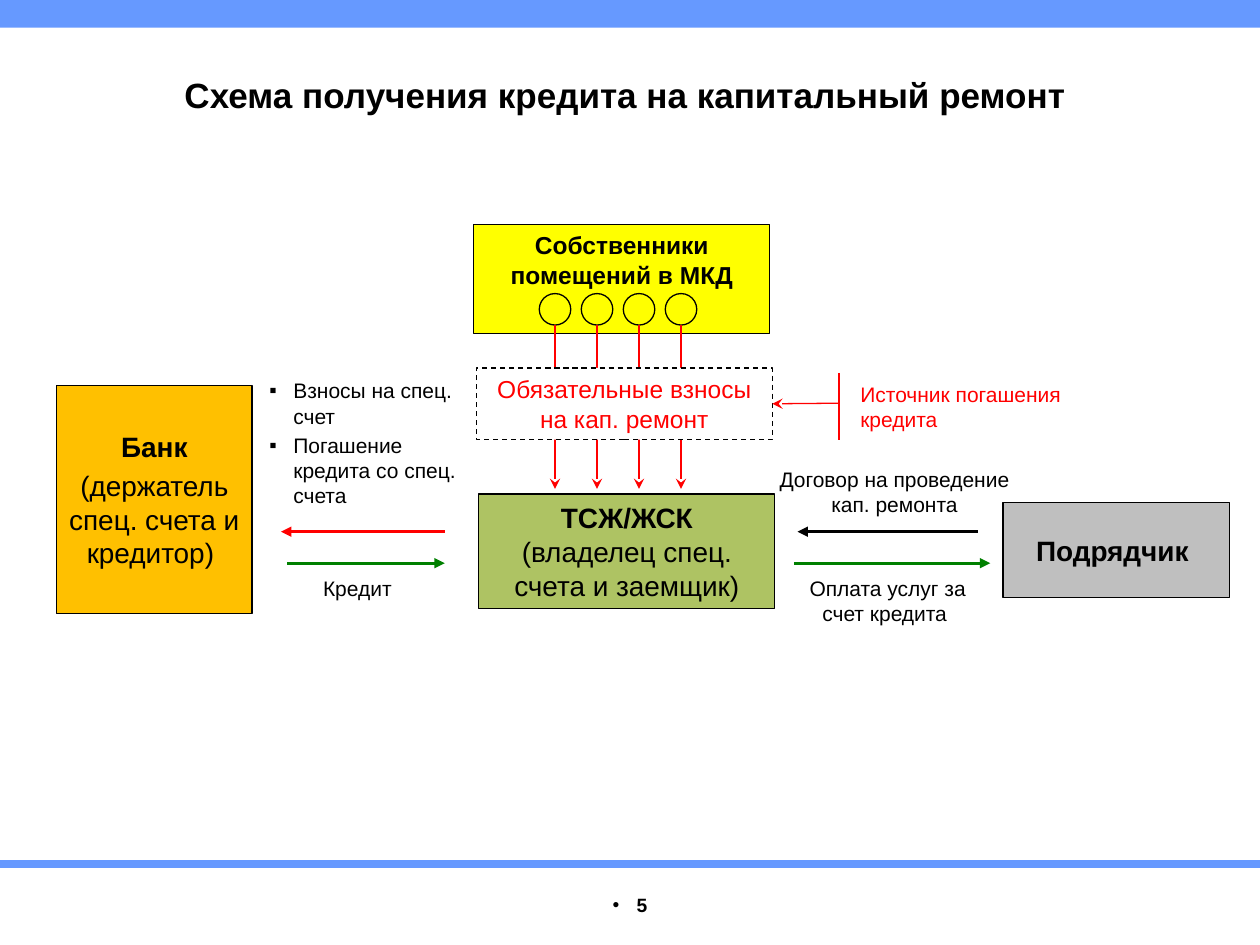
from pptx import Presentation
from pptx.util import Inches, Pt
from pptx.dml.color import RGBColor
from pptx.enum.dml import MSO_LINE as Dash
from pptx.enum.shapes import MSO_SHAPE as Shape, MSO_CONNECTOR as Link
from pptx.enum.text import PP_ALIGN as Align, MSO_ANCHOR as Anchor
from pptx.oxml.ns import qn
from lxml import etree

BLACK, RED, GREEN, BLUE = "000000", "FF0000", "008000", "6699FF"


def color(code):
    return RGBColor.from_string(code)


def write(shape, paras, size=12, tint=BLACK, bold=False, align=Align.CENTER,
          anchor=Anchor.TOP, bullet=None, hang=0.19):
    """Each paragraph is a string or a list of (text, bold) runs."""
    frame = shape.text_frame
    frame.word_wrap = True
    frame.vertical_anchor = anchor
    frame.margin_left = frame.margin_right = Inches(0.1)
    frame.margin_top = frame.margin_bottom = Inches(0.05)
    for i, para in enumerate(paras):
        p = frame.add_paragraph() if i else frame.paragraphs[0]
        p.alignment = align
        p.space_before = Pt(0.2 * size if i else 0)
        if bullet:
            props = p._p.get_or_add_pPr()
            props.set("marL", str(Inches(hang)))
            props.set("indent", str(-Inches(hang)))
            etree.SubElement(props, qn("a:buFont"), typeface="Arial")
            etree.SubElement(props, qn("a:buChar"), char=bullet)
        for text, heavy in [(para, bold)] if isinstance(para, str) else para:
            run = p.add_run()
            run.text = text
            font = run.font
            font.name, font.size, font.bold = "Arial", Pt(size), heavy
            font.color.rgb = color(tint)


def label(slide, box, paras, **form):
    shape = slide.shapes.add_textbox(*map(Inches, box))
    write(shape, paras, **form)


def block(slide, box, fill=None, line=BLACK, kind=Shape.RECTANGLE):
    shape = slide.shapes.add_shape(kind, *map(Inches, box))
    shape.shadow.inherit = False
    if fill:
        shape.fill.solid()
        shape.fill.fore_color.rgb = color(fill)
    else:
        shape.fill.background()
    if line:
        shape.line.color.rgb = color(line)
        shape.line.width = Pt(0.75)
    else:
        shape.line.fill.background()
    return shape


def link(slide, start, end, tint, width=1.75, head="triangle"):
    line = slide.shapes.add_connector(Link.STRAIGHT, *map(Inches, start + end))
    line.line.color.rgb = color(tint)
    line.line.width = Pt(width)
    if head:
        etree.SubElement(line.line._get_or_add_ln(), qn("a:tailEnd"), type=head)
    etree.SubElement(line._element.spPr, qn("a:effectLst"))
    return line


def draw_frame(slide):
    # Bands, title and page number
    block(slide, (0, 0, 10, 0.22), BLUE, None)
    link(slide, (0, 6.86), (10, 6.86), BLUE, 4.5, None)
    label(slide, (3.97, 7.04, 2.06, 0.31), ["5"], size=11, bold=True, bullet="•")
    title = slide.shapes.title
    title.left, title.top, title.width, title.height = map(
        Inches, (0.67, 0.53, 8.66, 0.44))
    write(title, ["Схема получения кредита на капитальный ремонт "],
          size=20, bold=True, anchor=Anchor.MIDDLE)


def draw_bank(slide, x, y):
    bank = block(slide, (x, y, 1.55, 1.81), "FFC000")
    write(bank, [[("Банк", True)], "(держатель спец. счета и кредитор) "],
          size=16, anchor=Anchor.MIDDLE)
    # Exchange between the bank and the association
    label(slide, (x + 1.59, y - 0.11, 1.76, 1.15),
          ["Взносы на спец. счет", "Погашение кредита со спец. счета"],
          align=Align.LEFT, bullet="▪")
    link(slide, (x + 3.08, y + 1.16), (x + 1.78, y + 1.16), RED)
    link(slide, (x + 1.83, y + 1.41), (x + 3.08, y + 1.41), GREEN)
    label(slide, (x + 1.91, y + 1.46, 1, 0.34), ["Кредит "])


def draw_owners(slide, x, y):
    owners = block(slide, (x, y, 2.35, 0.87), "FFFF00")
    write(owners, ["Собственники помещений в МКД"], size=14, bold=True)
    # Each owner pays into the account
    size, step, top = 0.25, 1 / 3, y + 0.55
    for i in range(4):
        left = x + 0.52 + i * step
        block(slide, (left, top, size, size), kind=Shape.OVAL)
        mid = left + size / 2
        link(slide, (mid, top + size), (mid, y + 2.1), RED, 0.75, "stealth")
    # Fees, over the payment lines
    fees = block(slide, (x + 0.02, y + 1.14, 2.35, 0.57), "FFFFFF")
    fees.line.dash_style = Dash.DASH
    write(fees, ["Обязательные взносы на кап. ремонт"], size=14, tint=RED,
          anchor=Anchor.MIDDLE)
    return fees


def draw_source(slide, x, y, fees):
    mid = y + 0.24
    arrow = link(slide, (x, mid), (x - 0.51, mid), RED, 0.75, "stealth")
    arrow.end_connect(fees, 3)
    link(slide, (x, y), (x, y + 0.53), RED, 0.75, None)
    label(slide, (x + 0.07, y + 0.02, 1.86, 0.5), ["Источник погашения кредита"],
          tint=RED, align=Align.LEFT)


def draw_union(slide, x, y):
    union = block(slide, (x, y, 2.35, 0.91), "AEC363")
    write(union, [[("ТСЖ/ЖСК ", True), ("(владелец спец. счета и заемщик)", False)]],
          size=16, anchor=Anchor.MIDDLE)


def draw_builder(slide, x, y):
    builder = block(slide, (x, y, 1.8, 0.75), "BFBFBF")
    write(builder, ["Подрядчик "], size=16, bold=True, anchor=Anchor.MIDDLE)
    # Exchange between the association and the builder
    label(slide, (x - 1.95, y - 0.34, 2.18, 0.5),
          ["Договор на проведение кап. ремонта"])
    link(slide, (x - 0.2, y + 0.23), (x - 1.63, y + 0.23), BLACK)
    link(slide, (x - 1.66, y + 0.48), (x - 0.1, y + 0.48), GREEN)
    label(slide, (x - 1.66, y + 0.53, 1.49, 0.5), ["Оплата услуг за счет кредита "])


def main():
    deck = Presentation()
    deck.slide_width, deck.slide_height = Inches(10), Inches(7.5)
    slide = deck.slides.add_slide(deck.slide_layouts[5])
    draw_frame(slide)
    draw_bank(slide, 0.45, 3.06)
    draw_union(slide, 3.8, 3.92)
    fees = draw_owners(slide, 3.76, 1.78)
    draw_source(slide, 6.66, 2.96, fees)
    draw_builder(slide, 7.96, 3.99)
    deck.save("out.pptx")


if __name__ == "__main__":
    main()
